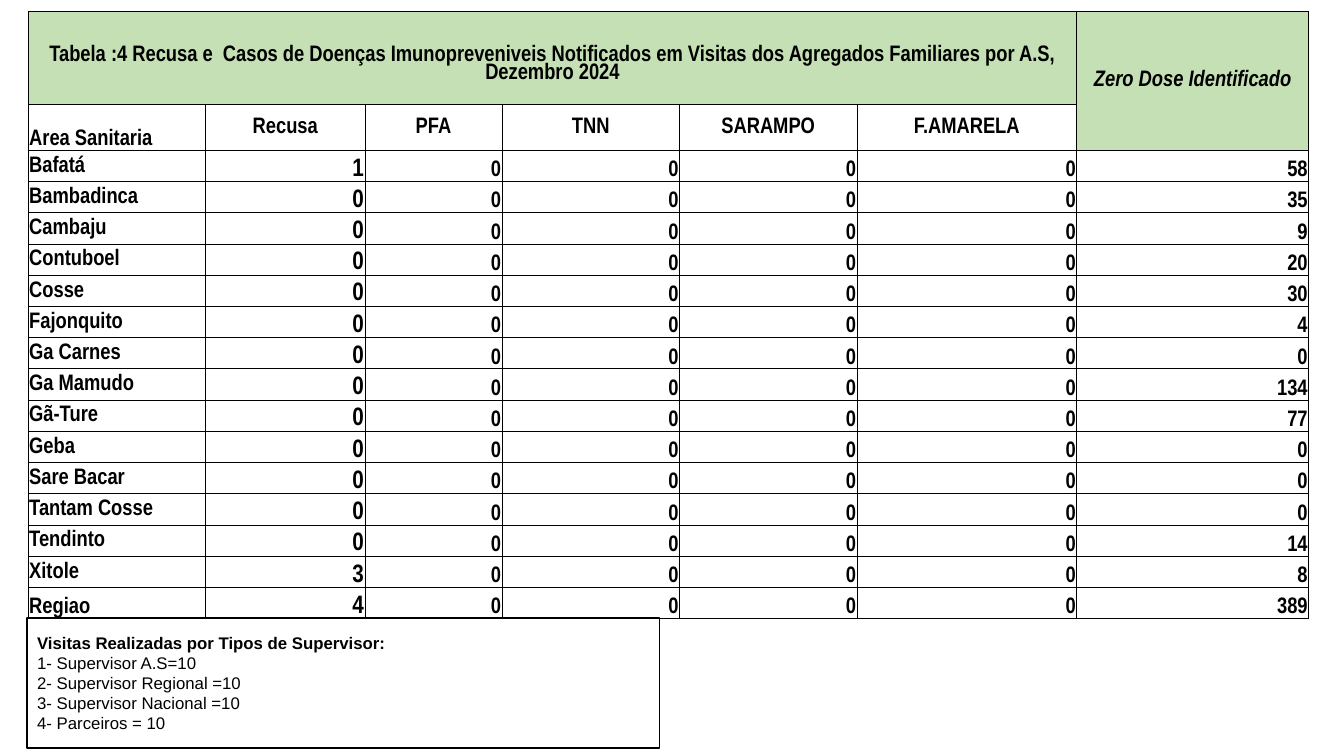
from dataclasses import dataclass

from lxml import etree
from pptx import Presentation
from pptx import util as u
from pptx.dml.color import RGBColor
from pptx.enum import shapes, text
from pptx.oxml import ns

LEFT, CENTER, RIGHT = text.PP_ALIGN.LEFT, text.PP_ALIGN.CENTER, text.PP_ALIGN.RIGHT
MIDDLE, BOTTOM = text.MSO_ANCHOR.MIDDLE, text.MSO_ANCHOR.BOTTOM


@dataclass(frozen=True)
class Theme:
    ink: str = "000000"
    paper: str = "FFFFFF"
    green: str = "C5E0B4"
    narrow: str = "Arial Narrow"
    sans: str = "Arial"
    base: int = 16
    large: int = 18
    note: int = 12
    edge: float = 0.5


@dataclass(frozen=True)
class Area:
    name: str
    refused: int
    zero: int


@dataclass(frozen=True)
class Style:
    align: text.PP_ALIGN
    anchor: text.MSO_ANCHOR
    size: int
    fill: str
    italic: bool = False


THEME = Theme()
TITLE = ("Tabela :4 Recusa e  Casos de Doenças Imunopreveniveis Notificados em "
         "Visitas dos Agregados Familiares por A.S, Dezembro 2024")
HEADS = ["Recusa", "PFA", "TNN", "SARAMPO", "F.AMARELA"]
COLS = [1.76, 1.58, 1.36, 1.76, 1.76, 2.18, 2.3]
AREAS = [
    Area("Bafatá", 1, 58), Area("Bambadinca", 0, 35), Area("Cambaju", 0, 9),
    Area("Contuboel", 0, 20), Area("Cosse", 0, 30), Area("Fajonquito", 0, 4),
    Area("Ga Carnes", 0, 0), Area("Ga Mamudo", 0, 134), Area("Gã-Ture", 0, 77),
    Area("Geba", 0, 0), Area("Sare Bacar", 0, 0), Area("Tantam Cosse", 0, 0),
    Area("Tendinto", 0, 14), Area("Xitole", 3, 8), Area("Regiao", 4, 389),
]
ROWS = [0.93, 0.45] + [0.31] * len(AREAS)
NOTES = ["Visitas Realizadas por Tipos de Supervisor:", "1- Supervisor A.S=10",
         "2- Supervisor Regional =10", "3- Supervisor Nacional =10",
         "4- Parceiros = 10"]

BANNER = Style(CENTER, BOTTOM, THEME.base, THEME.green)
SIDE = Style(CENTER, MIDDLE, THEME.base, THEME.green, italic=True)
HEAD = Style(CENTER, MIDDLE, THEME.base, THEME.paper)
NAME = Style(LEFT, MIDDLE, THEME.base, THEME.paper)
LABEL = Style(LEFT, BOTTOM, THEME.base, THEME.paper)
COUNT = Style(RIGHT, BOTTOM, THEME.base, THEME.paper)
REFUSED = Style(RIGHT, BOTTOM, THEME.large, THEME.paper)


def rgb(code: str) -> RGBColor:
    return RGBColor.from_string(code)


def frame(cell) -> None:
    """Draw a thin line on all four sides of the cell."""
    props = cell._tc.get_or_add_tcPr()
    for side in ("lnL", "lnR", "lnT", "lnB"):
        line = etree.SubElement(props, ns.qn(f"a:{side}"), w=str(u.Pt(THEME.edge)))
        fill = etree.SubElement(line, ns.qn("a:solidFill"))
        etree.SubElement(fill, ns.qn("a:srgbClr"), val=THEME.ink)


def dress(par, face: str, size: int, bold: bool, italic: bool = False) -> None:
    for run in par.runs:
        font = run.font
        font.name, font.size = face, u.Pt(size)
        font.bold, font.italic = bold, italic
        font.color.rgb = rgb(THEME.ink)


def write(cell, words: str, style: Style) -> None:
    cell.text_frame.text = words
    cell.vertical_anchor = style.anchor
    cell.fill.solid()
    cell.fill.fore_color.rgb = rgb(style.fill)
    par = cell.text_frame.paragraphs[0]
    par.alignment = style.align
    dress(par, THEME.narrow, style.size, True, style.italic)


def draw_table(slide) -> None:
    grid = slide.shapes.add_table(
        len(ROWS), len(COLS), u.Inches(0.28), u.Inches(0.11),
        u.Inches(sum(COLS)), u.Inches(sum(ROWS))).table
    grid.first_row = grid.horz_banding = False
    for col, width in zip(grid.columns, COLS):
        col.width = u.Inches(width)
    for row, height in zip(grid.rows, ROWS):
        row.height = u.Inches(height)
    for cell in grid.iter_cells():
        cell.margin_left = cell.margin_right = cell.margin_top = u.Inches(0.01)
        cell.margin_bottom = 0
        frame(cell)

    last = len(COLS) - 1
    banner, side = grid.cell(0, 0), grid.cell(0, last)
    banner.merge(grid.cell(0, last - 1))
    side.merge(grid.cell(1, last))
    write(banner, TITLE, BANNER)
    banner.margin_bottom = u.Inches(0.22)
    banner.text_frame.paragraphs[0].line_spacing = 0.85
    write(side, "Zero Dose Identificado", SIDE)

    write(grid.cell(1, 0), "Area Sanitaria", LABEL)
    for c, head in enumerate(HEADS, 1):
        write(grid.cell(1, c), head, HEAD)
    for r, area in enumerate(AREAS, 2):
        total = area is AREAS[-1]
        write(grid.cell(r, 0), area.name, LABEL if total else NAME)
        write(grid.cell(r, 1), str(area.refused), REFUSED)
        for c in range(2, last):
            write(grid.cell(r, c), "0", COUNT)
        write(grid.cell(r, last), str(area.zero), COUNT)


def draw_notes(slide) -> None:
    box = slide.shapes.add_shape(
        shapes.MSO_SHAPE.RECTANGLE, u.Inches(0.27), u.Inches(6.13),
        u.Inches(6.27), u.Inches(1.29))
    box.shadow.inherit = False
    box.fill.solid()
    box.fill.fore_color.rgb = rgb(THEME.paper)
    box.line.color.rgb = rgb(THEME.ink)
    box.line.width = u.Pt(1)
    body = box.text_frame
    body.word_wrap = True
    body.vertical_anchor = MIDDLE
    body.text = "\n".join(NOTES)
    for i, par in enumerate(body.paragraphs):
        par.alignment = LEFT
        dress(par, THEME.sans, THEME.note, bold=i == 0)


def main() -> None:
    deck = Presentation()
    deck.slide_width, deck.slide_height = u.Inches(13.33), u.Inches(7.5)
    slide = deck.slides.add_slide(deck.slide_layouts[6])
    draw_table(slide)
    draw_notes(slide)
    deck.save("out.pptx")


if __name__ == "__main__":
    main()
